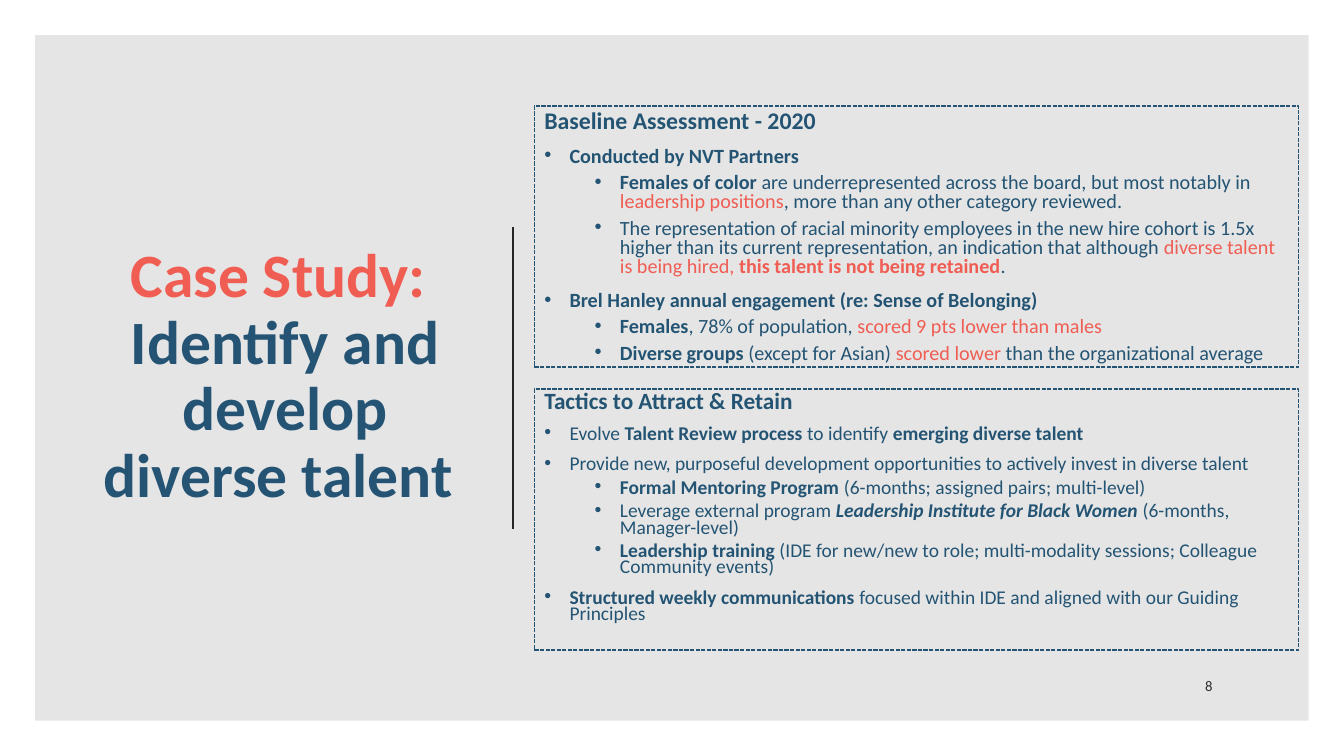
from dataclasses import dataclass

from lxml import etree
from pptx import Presentation
from pptx import util as u
from pptx.dml.color import RGBColor
from pptx.enum import dml, shapes, text
from pptx.oxml import ns


@dataclass(frozen=True)
class Theme:
    font: str = "Calibri"
    black: str = "000000"
    navy: str = "245473"
    title_navy: str = "245374"
    coral: str = "F05D53"
    rule: str = "262626"
    title_size: float = 44
    number_size: float = 10.5
    title_spacing: float = 0.9


THEME = Theme()

# Each paragraph is (level, runs); each run is (text, marks):
# b = bold, i = italic, c = coral
BASELINE = [
    (0, [("Baseline Assessment - 2020", "b")]),
    (1, [("Conducted by NVT Partners", "b")]),
    (2, [("Females of color ", "b"),
         ("are underrepresented across the board, but most notably in ", ""),
         ("leadership positions", "c"),
         (", more than any other category reviewed.", "")]),
    (2, [("The representation of racial minority employees in the new hire cohort is 1.5x "
          "higher than its current representation, an indication that although ", ""),
         ("diverse talent is being hired, ", "c"),
         ("this talent is not being retained", "bc"),
         (".", "")]),
    (1, [("Brel Hanley annual engagement (re: Sense of Belonging)", "b")]),
    (2, [("Females", "b"), (", 78% of population, ", ""),
         ("scored 9 pts lower than males", "c")]),
    (2, [("Diverse groups ", "b"), ("(except for Asian) ", ""),
         ("scored lower ", "c"), ("than the organizational average", "")]),
]
TACTICS = [
    (0, [("Tactics to Attract & Retain", "b")]),
    (1, [("Evolve ", ""), ("Talent Review process ", "b"),
         ("to identify ", ""), ("emerging diverse talent", "b")]),
    (1, [("Provide new, purposeful development opportunities to actively invest "
          "in diverse talent", "")]),
    (2, [("Formal Mentoring Program ", "b"),
         ("(6-months; assigned pairs; multi-level)", "")]),
    (2, [("Leverage external program ", ""),
         ("Leadership Institute for Black Women ", "bi"),
         ("(6-months, Manager-level)", "")]),
    (2, [("Leadership training ", "b"),
         ("(IDE for new/new to role; multi-modality sessions; Colleague Community events)", "")]),
    (1, [("Structured weekly communications ", "b"),
         ("focused within IDE and aligned with our Guiding Principles", "")]),
]


def inches(*values):
    return [u.Inches(v) for v in values]


def set_alpha(element, percent):
    for clr in element.iter(ns.qn("a:srgbClr")):
        etree.SubElement(clr, ns.qn("a:alpha")).set("val", str(percent * 1000))


def add_run(p, words, size, color, bold=False, italic=False):
    r = p.add_run()
    r.text = words
    r.font.name, r.font.size = THEME.font, u.Pt(size)
    r.font.bold, r.font.italic = bold, italic
    r.font.color.rgb = RGBColor.from_string(color)
    return r


def add_bullet(p, level):
    pPr = p._p.get_or_add_pPr()
    pPr.set("marL", str(u.Inches(0.25 if level == 1 else 0.75)))
    pPr.set("indent", str(u.Inches(-0.25)))
    etree.SubElement(pPr, ns.qn("a:buFont")).set("typeface", "Arial")
    etree.SubElement(pPr, ns.qn("a:buChar")).set("char", "•")


def add_rect(s, box):
    sp = s.shapes.add_shape(shapes.MSO_SHAPE.RECTANGLE, *inches(*box))
    sp.shadow.inherit = False
    return sp


def add_text_frame(s, box):
    tf = s.shapes.add_textbox(*inches(*box)).text_frame
    tf.word_wrap = True
    tf.vertical_anchor = text.MSO_ANCHOR.MIDDLE
    tf.paragraphs[0].alignment = text.PP_ALIGN.CENTER
    return tf


def add_backdrop(s, box):
    sp = add_rect(s, box)
    sp.fill.solid()
    sp.fill.fore_color.rgb = RGBColor.from_string(THEME.black)
    set_alpha(sp._element.spPr, 10)
    sp.line.fill.background()


def add_title(s, box):
    p = add_text_frame(s, box).paragraphs[0]
    p.line_spacing = THEME.title_spacing
    add_run(p, "Case Study: ", THEME.title_size, THEME.coral, bold=True)
    p.add_line_break()
    add_run(p, "Identify and develop diverse talent ", THEME.title_size,
            THEME.title_navy, bold=True)


def add_divider(s, x, top, bottom):
    line = s.shapes.add_connector(shapes.MSO_CONNECTOR.STRAIGHT, *inches(x, top, x, bottom))
    line.line.color.rgb = RGBColor.from_string(THEME.rule)
    line.line.width = u.Pt(1.5)
    etree.SubElement(line._element.spPr, ns.qn("a:effectLst"))


def add_panel(s, box, paragraphs, heading_size, body_size, spacing):
    sp = add_rect(s, box)
    sp.fill.background()
    sp.line.color.rgb = RGBColor.from_string(THEME.title_navy)
    sp.line.width = u.Pt(1)
    sp.line.dash_style = dml.MSO_LINE.SQUARE_DOT
    tf = sp.text_frame
    tf.word_wrap = True
    tf.vertical_anchor = text.MSO_ANCHOR.TOP
    for i, (level, runs) in enumerate(paragraphs):
        p = tf.add_paragraph() if i else tf.paragraphs[0]
        p.alignment = text.PP_ALIGN.LEFT
        p.line_spacing = spacing
        if level:
            p.space_before = u.Pt(10 if level == 1 else 5)
            p.level = level - 1
            add_bullet(p, level)
        for words, marks in runs:
            add_run(p, words, body_size if level else heading_size,
                    THEME.coral if "c" in marks else THEME.navy,
                    "b" in marks, "i" in marks)


def add_slide_number(s, box, number):
    p = add_text_frame(s, box).paragraphs[0]
    p.space_after = u.Pt(6)
    r = add_run(p, number, THEME.number_size, THEME.black)
    set_alpha(r._r, 80)


def build_case_study(prs):
    s = prs.slides.add_slide(prs.slide_layouts[6])
    add_backdrop(s, (0.35, 0.35, 12.63, 6.8))
    add_title(s, (0.92, 1.05, 3.82, 5.39))
    add_divider(s, 5.09, 2.25, 5.25)
    # Two stacked panels of equal size
    left, top, width, height, gap = 5.3, 1.05, 7.58, 2.59, 0.22
    panels = [(BASELINE, 17, 14.4, 0.8), (TACTICS, 16.6, 13.9, 0.7)]
    for i, panel in enumerate(panels):
        add_panel(s, (left, top + i * (height + gap), width, height), *panel)
    add_slide_number(s, (11.56, 6.6, 0.86, 0.4), "8")


def main():
    prs = Presentation()
    prs.slide_width, prs.slide_height = inches(13.33, 7.5)
    build_case_study(prs)
    prs.save("out.pptx")


if __name__ == "__main__":
    main()
